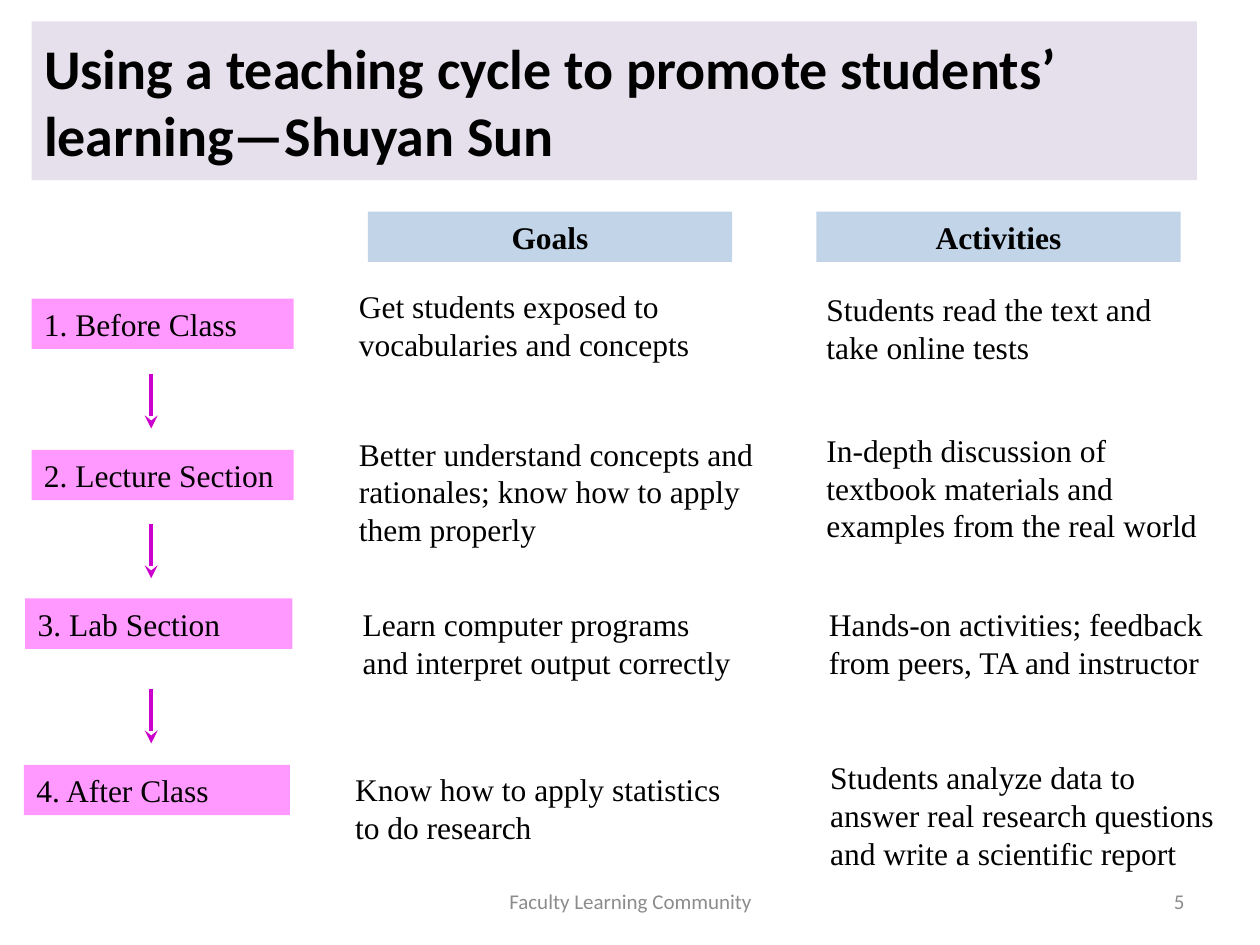
from pptx import Presentation
from pptx.dml.color import RGBColor
from pptx.enum.shapes import MSO_CONNECTOR, MSO_SHAPE
from pptx.enum.text import MSO_ANCHOR, MSO_AUTO_SIZE, PP_ALIGN
from pptx.oxml.ns import qn
from pptx.util import Inches, Pt
from lxml import etree

LEFT, MID, RIGHT = PP_ALIGN.LEFT, PP_ALIGN.CENTER, PP_ALIGN.RIGHT
TOP, CENTER = MSO_ANCHOR.TOP, MSO_ANCHOR.MIDDLE
RECT, LINE, FIXED = MSO_SHAPE.RECTANGLE, MSO_CONNECTOR.STRAIGHT, MSO_AUTO_SIZE.NONE

# Content: each item is (text, left, top, width)
TITLE = "Using a teaching cycle to promote students’ learning—Shuyan Sun"
HEADS = [("Goals", 2.92, 1.68, 2.89), ("Activities", 6.48, 1.68, 2.89)]
STEPS = [
    ("1. Before Class", 0.25, 2.37, 2.08),
    ("2. Lecture Section", 0.25, 3.57, 2.08),
    ("3. Lab Section", 0.2, 4.75, 2.12),
    ("4. After Class", 0.19, 6.07, 2.11),
]
GOALS = [
    ("Get students exposed to vocabularies and concepts", 2.75, 2.23, 3.47),
    ("Better understand concepts and rationales; know how to apply them properly",
     2.75, 3.4, 3.35),
    ("Learn computer programs and interpret output correctly", 2.78, 4.75, 3.14),
    ("Know how to apply statistics to do research", 2.72, 6.06, 3.2),
]
TASKS = [
    ("Students read the text and take online tests", 6.46, 2.25, 3.08),
    ("In-depth discussion of\vtextbook materials and examples from the real world",
     6.46, 3.37, 3.35),
    ("Hands-on activities; feedback from peers, TA and instructor", 6.48, 4.75, 3.35),
    ("Students analyze data to answer real research questions and write a scientific report",
     6.49, 5.97, 3.32),
]
FOOT = [("Faculty Learning Community", 3.42, 3.17, MID), ("5", 7.17, 2.33, RIGHT)]
ARROWS = [2.97, 4.16, 5.47]

# Theme
THEME = {
    "title": {"name": "Calibri", "size": Pt(32), "bold": True, "color": "000000"},
    "head": {"name": "Times New Roman", "size": Pt(18), "bold": True, "color": "000000"},
    "body": {"name": "Times New Roman", "size": Pt(18), "bold": False, "color": "000000"},
    "foot": {"name": "Calibri", "size": Pt(12), "bold": False, "color": "8C8C8C"},
    "band": "E6E0EC", "blue": "4F81BD", "pink": "FF99FF", "arrow": "CC00CC",
}


def paint(fill, color, alpha=None):
    fill.solid()
    fill.fore_color.rgb = RGBColor.from_string(THEME[color])
    return fill


def write(shape, text, style, align=LEFT, anchor=TOP):
    frame = shape.text_frame
    frame.text = text
    for key, val in {"word_wrap": True, "auto_size": FIXED,
                     "vertical_anchor": anchor}.items():
        setattr(frame, key, val)
    para = frame.paragraphs[0]
    para.alignment = align
    for run in para.runs:
        for key, val in THEME[style].items():
            if key == "color":
                run.font.color.rgb = RGBColor.from_string(val)
            else:
                setattr(run.font, key, val)


def add_bar(shapes, item, color, style, align=LEFT):
    text, left, top, width = item
    bar = shapes.add_shape(RECT, Inches(left), Inches(top), Inches(width), Inches(0.4))
    bar.shadow.inherit = False
    bar.line.fill.background()
    paint(bar.fill, color)
    write(bar, text, style, align)
    return bar


def add_text(shapes, text, box, style, align=LEFT, anchor=TOP):
    write(shapes.add_textbox(*map(Inches, box)), text, style, align, anchor)


def add_arrow(shapes, top):
    arrow = shapes.add_connector(LINE, Inches(1.2), Inches(top),
                                 Inches(1.2), Inches(top + 0.43))
    paint(arrow.line.fill, "arrow")
    arrow.line.width = Pt(2.5)
    etree.SubElement(arrow.line._get_or_add_ln(), qn("a:tailEnd"), type="stealth")
    etree.SubElement(arrow._element.spPr, qn("a:effectLst"))


def main():
    deck = Presentation()
    deck.slide_width, deck.slide_height = Inches(10), Inches(7.5)
    slide = deck.slides.add_slide(deck.slide_layouts[5])
    shapes = slide.shapes

    # Title band
    title = shapes.title
    for key, val in {"left": 0.25, "top": 0.17, "width": 9.25, "height": 1.26}.items():
        setattr(title, key, Inches(val))
    paint(title.fill, "band")
    write(title, TITLE, "title", anchor=CENTER)

    # Column heads, see-through blue
    for item in HEADS:
        bar = add_bar(shapes, item, "blue", "head", MID)
        tint = bar._element.spPr.find(qn("a:solidFill"))[0]
        etree.SubElement(tint, qn("a:alpha"), val="34000")

    # Steps and the arrows between them
    for item in STEPS:
        add_bar(shapes, item, "pink", "body")
    for top in ARROWS:
        add_arrow(shapes, top)

    # Goals and activities
    for text, left, top, width in GOALS + TASKS:
        add_text(shapes, text, (left, top, width, 0.71), "body")

    # Footer
    for text, left, width, align in FOOT:
        add_text(shapes, text, (left, 6.95, width, 0.4), "foot", align, CENTER)

    deck.save("out.pptx")


if __name__ == "__main__":
    main()
